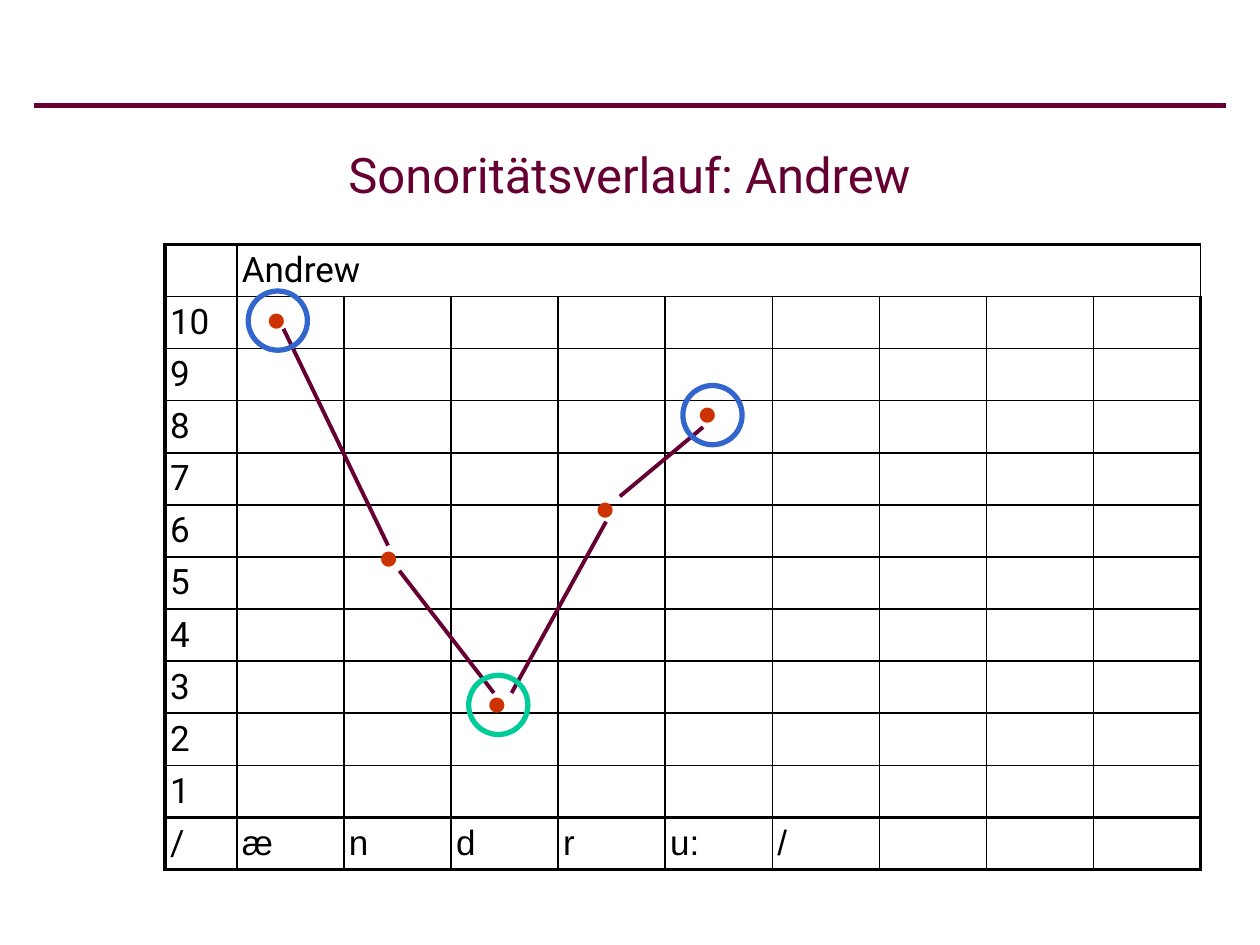
from lxml import etree
from pptx import Presentation
from pptx.dml.color import RGBColor
from pptx.enum.shapes import MSO_CONNECTOR, MSO_SHAPE
from pptx.enum.text import MSO_ANCHOR, PP_ALIGN
from pptx.oxml import parse_xml
from pptx.oxml.ns import qn
from pptx.util import Inches, Pt

STRAIGHT = MSO_CONNECTOR.STRAIGHT
OVAL = MSO_SHAPE.OVAL
MIDDLE = MSO_ANCHOR.MIDDLE
LEFT = PP_ALIGN.LEFT
CENTER = PP_ALIGN.CENTER

COLORS = {
    "plum": "660033",
    "black": "000000",
    "dot": "CC3300",
    "peak": "3366CC",
    "valley": "00CC99",
}
DRAWING = "http://schemas.openxmlformats.org/drawingml/2006/main"
THIN, THICK = 1, 2.25
COLUMN_WIDTHS = [0.57] + [0.85] * 9
ROW_HEIGHT = 0.41
LEVELS = range(10, 0, -1)
SOUNDS = ["/", "æ", "n", "d", "r", "u:", "/"]
DOTS = [(2.11, 2.39), (3, 4.28), (3.86, 5.44), (4.72, 3.89), (5.53, 3.14)]
SEGMENTS = [
    ((3.08, 4.33), (2.25, 2.61)),
    ((3.17, 4.53), (3.92, 5.5)),
    ((4.06, 5.5), (4.81, 4.14)),
    ((4.92, 3.94), (5.58, 3.39)),
]
RINGS = [(1.97, 2.31, "peak"), (5.42, 3.06, "peak"), (3.72, 5.36, "valley")]


def rgb(name):
    return RGBColor.from_string(COLORS[name])


class SlideBuilder:
    font = "Roboto"
    symbol_font = "Arial"
    text_size = 20

    def __init__(self, slide):
        self.slide = slide

    def set_text(self, frame, text, size, color, font, align=LEFT):
        paragraph = frame.paragraphs[0]
        paragraph.text = text
        paragraph.alignment = align
        paragraph.font.size = Pt(size)
        paragraph.font.name = font
        paragraph.font.color.rgb = rgb(color)
        return paragraph

    def title(self, text, left, top, width, height):
        box = self.slide.shapes.add_textbox(
            Inches(left), Inches(top), Inches(width), Inches(height))
        box.text_frame.word_wrap = True
        box.text_frame.vertical_anchor = MIDDLE
        self.set_text(box.text_frame, text, 28, "plum", self.font, CENTER)

    def line(self, start, end, width):
        connector = self.slide.shapes.add_connector(
            STRAIGHT, *(Inches(value) for value in start + end))
        connector.line.color.rgb = rgb("plum")
        connector.line.width = Pt(width)
        etree.SubElement(connector._element.spPr, qn("a:effectLst"))

    def dot(self, left, top):
        box = self.slide.shapes.add_textbox(
            Inches(left), Inches(top), Inches(0.28), Inches(0.3))
        frame = box.text_frame
        frame.margin_left = frame.margin_right = 0
        frame.margin_top = frame.margin_bottom = 0
        paragraph = self.set_text(
            frame, "●", self.text_size, "dot", self.symbol_font)
        paragraph.line_spacing = 0.9

    def ring(self, left, top, color):
        shape = self.slide.shapes.add_shape(
            OVAL, Inches(left), Inches(top), Inches(0.47), Inches(0.47))
        shape.shadow.inherit = False
        shape.fill.background()
        shape.line.color.rgb = rgb(color)
        shape.line.width = Pt(3)

    def borders(self, cell, widths):
        properties = cell._tc.get_or_add_tcPr()
        for index, (side, width) in enumerate(widths.items()):
            properties.insert(index, parse_xml(
                f'<a:ln{side} xmlns:a="{DRAWING}" w="{Pt(width)}"><a:solidFill>'
                f'<a:srgbClr val="{COLORS["black"]}"/></a:solidFill></a:ln{side}>'))

    def table(self, rows, left, top):
        last_row, last_column = len(rows) - 1, len(COLUMN_WIDTHS) - 1
        table = self.slide.shapes.add_table(
            len(rows), len(COLUMN_WIDTHS), Inches(left), Inches(top),
            Inches(sum(COLUMN_WIDTHS)), Inches(ROW_HEIGHT * len(rows))).table
        table.first_row = table.horz_banding = False
        for column, width in zip(table.columns, COLUMN_WIDTHS):
            column.width = Inches(width)
        for row_index, texts in enumerate(rows):
            table.rows[row_index].height = Inches(ROW_HEIGHT)
            padded = texts + [""] * (len(COLUMN_WIDTHS) - len(texts))
            for column_index, text in enumerate(padded):
                cell = table.cell(row_index, column_index)
                cell.fill.background()
                cell.vertical_anchor = MIDDLE
                cell.margin_left = cell.margin_right = Inches(0.04)
                cell.margin_top = cell.margin_bottom = Inches(0.04)
                heavy = {
                    "L": column_index == 0,
                    "R": column_index == last_column,
                    "T": row_index in (0, last_row),
                    "B": row_index >= last_row - 1,
                }
                self.borders(cell, {
                    side: THICK if on else THIN for side, on in heavy.items()})
                if text:
                    is_sound = row_index == last_row and column_index > 0
                    font = self.symbol_font if is_sound else self.font
                    self.set_text(
                        cell.text_frame, text, self.text_size, "black", font)
        table.cell(0, 1).merge(table.cell(0, last_column))


def main():
    presentation = Presentation()
    presentation.slide_width = Inches(10)
    presentation.slide_height = Inches(7.5)
    builder = SlideBuilder(
        presentation.slides.add_slide(presentation.slide_layouts[6]))

    builder.line((0.27, 0.84), (9.73, 0.84), 3)
    builder.title("Sonoritätsverlauf: Andrew", 0.27, 0.84, 9.45, 1.08)
    level_rows = [[str(level)] for level in LEVELS]
    builder.table([["", "Andrew"], *level_rows, SOUNDS], 1.31, 1.94)
    for left, top in DOTS:
        builder.dot(left, top)
    for start, end in SEGMENTS:
        builder.line(start, end, 2.25)
    for left, top, color in RINGS:
        builder.ring(left, top, color)

    presentation.save("out.pptx")


if __name__ == "__main__":
    main()
